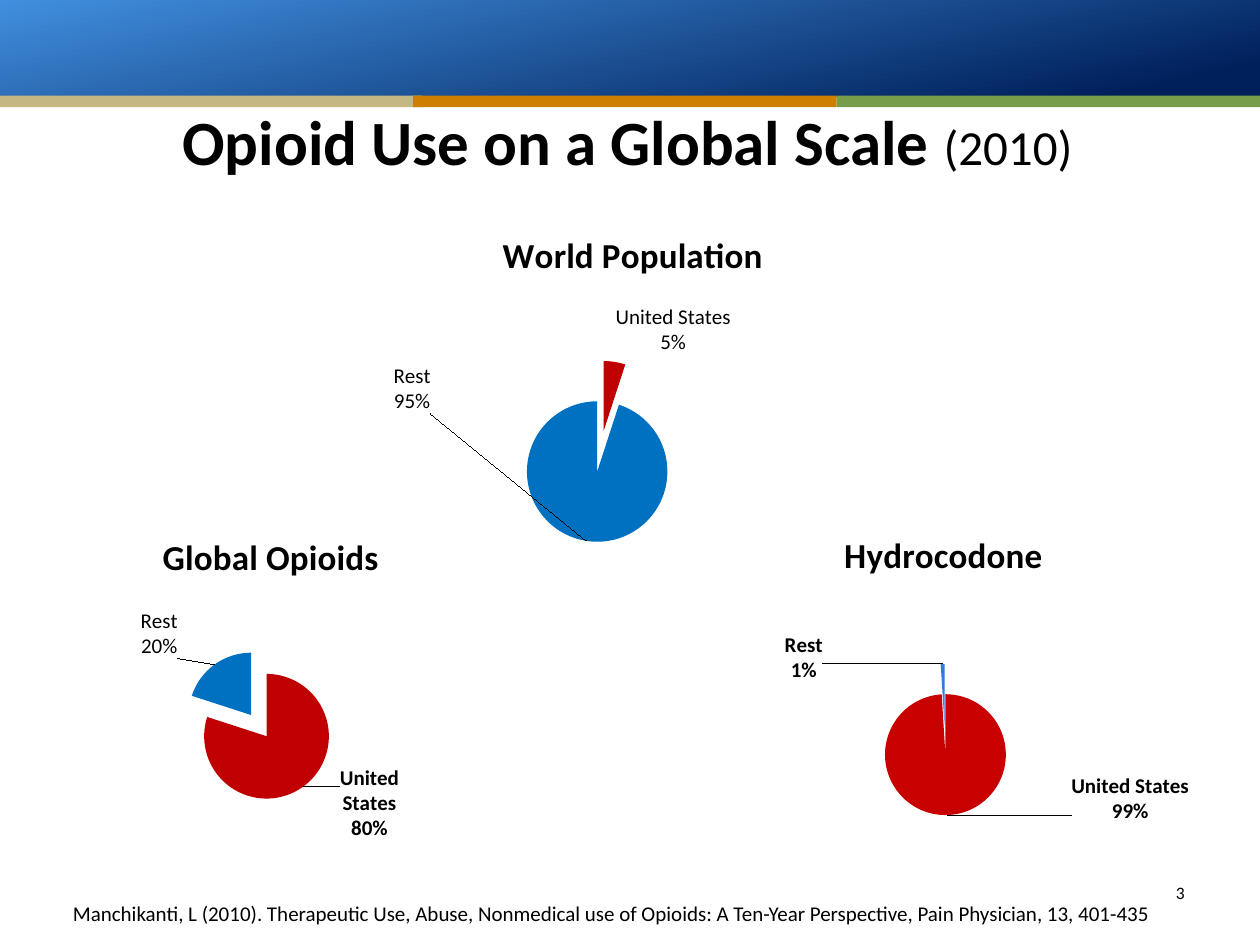
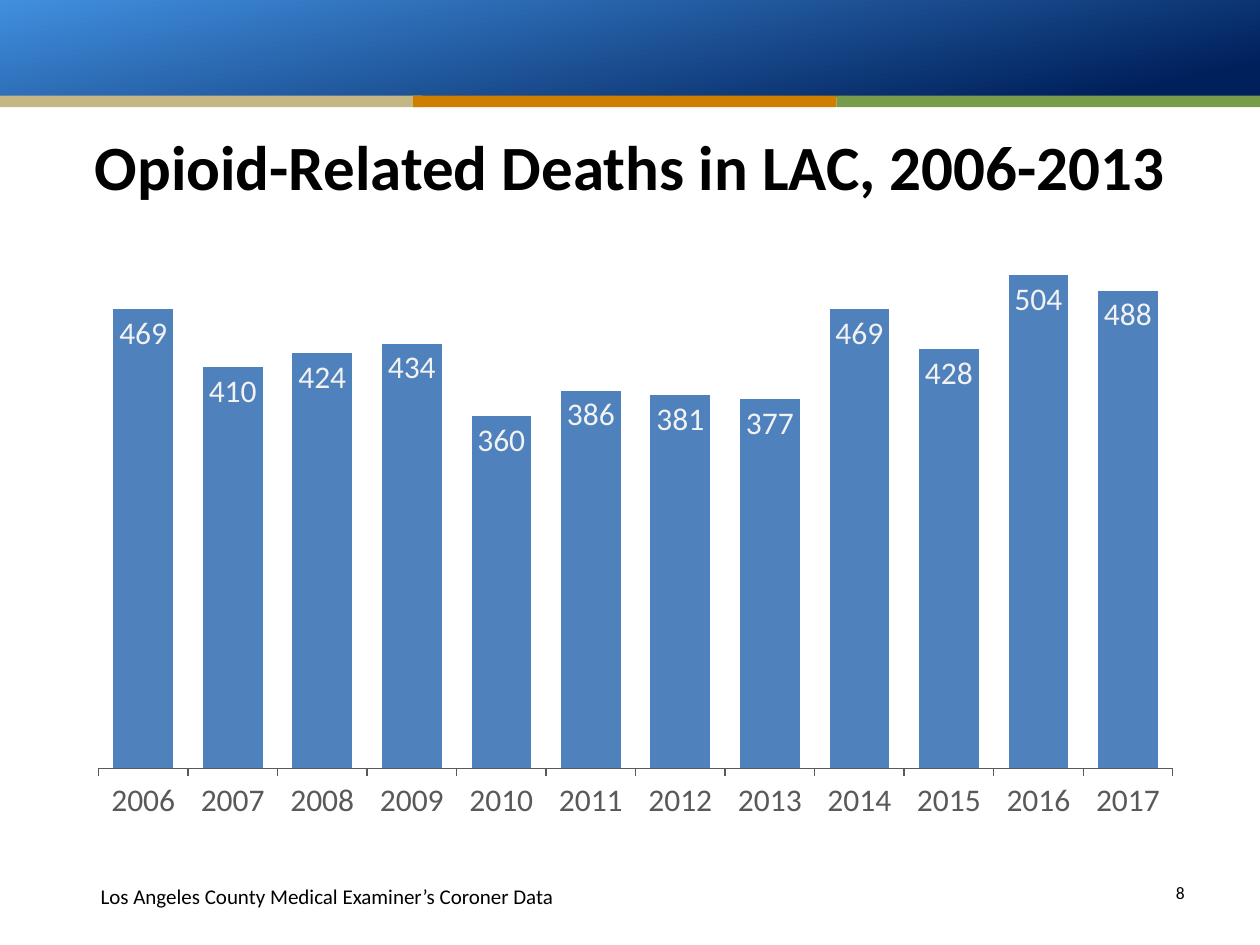
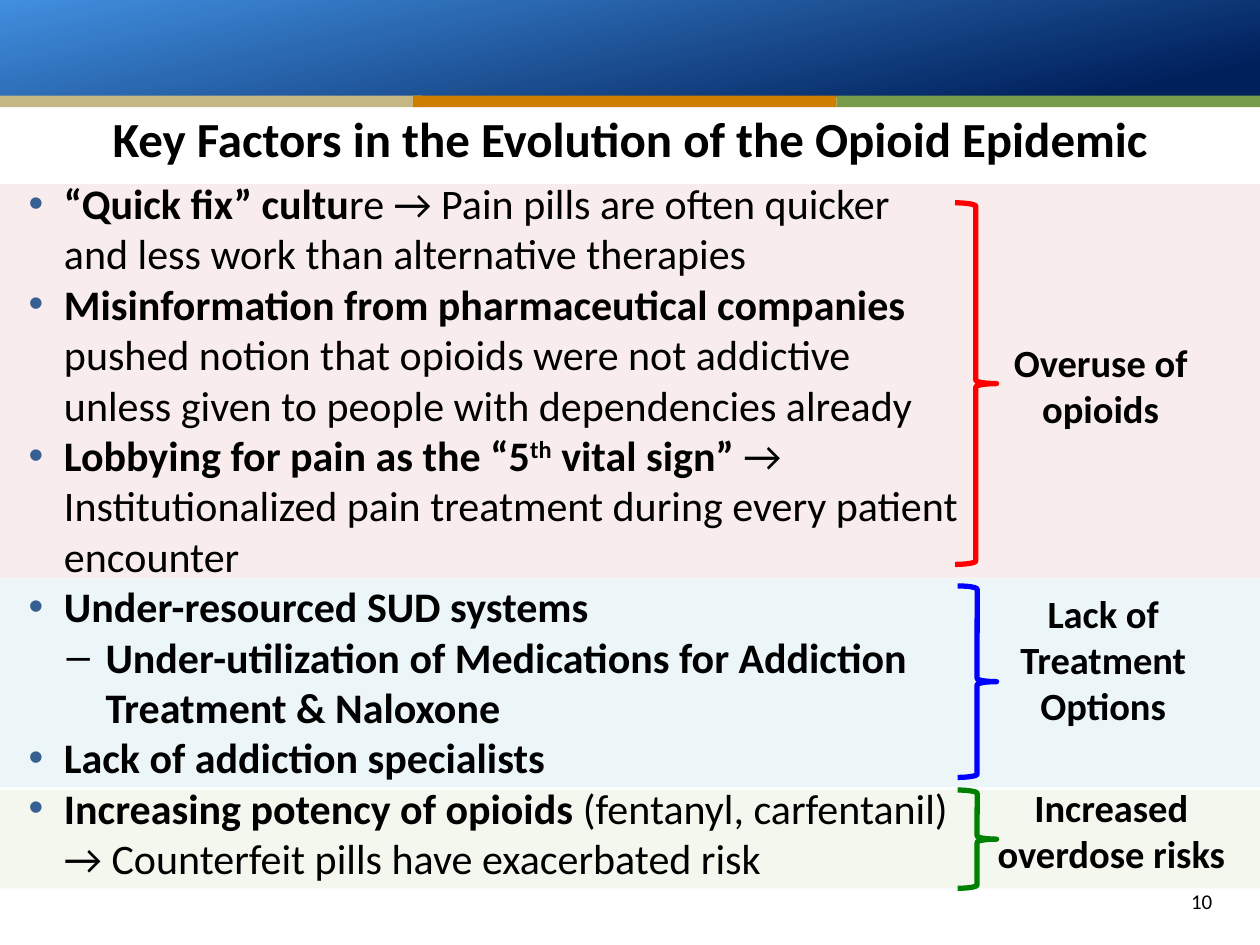
from dataclasses import dataclass

from pptx import Presentation, util as u
from pptx.chart.data import CategoryChartData
from pptx.dml.color import RGBColor
from pptx.enum import chart as ch, shapes, text
from pptx.oxml import parse_xml
from pptx.oxml.ns import nsdecls


@dataclass(frozen=True)
class Theme:
    font: str = "Calibri"
    ink: str = "000000"
    navy: str = "00205B"
    sky: str = "418FDE"
    bands: tuple = ("C5B783", "CF7F00", "789D4A")
    red: str = "C00000"
    blue: str = "0070C0"
    bar: str = "4F81BD"
    pale: str = "F2F2F2"
    grey: str = "595959"
    dot: str = "376092"
    title: int = 36
    sub: int = 28
    body: int = 24
    side: int = 22
    head: int = 20
    axis: int = 18
    note: int = 12
    page: int = 10


T = Theme()
LEFT, MID, RIGHT = text.PP_ALIGN.LEFT, text.PP_ALIGN.CENTER, text.PP_ALIGN.RIGHT


def rgb(tone):
    return RGBColor.from_string(tone)


def inches(box):
    return [u.Inches(n) for n in box]


def xml(tag, inner="", attrs=""):
    return parse_xml(f'<{tag} {nsdecls("a", "c")} {attrs}>{inner}</{tag}>')


def style(font, size, tone=T.ink, bold=None):
    font.name, font.size, font.bold = T.font, u.Pt(size), bold
    font.color.rgb = rgb(tone)


def draw(slide, kind, box):
    shape = slide.shapes.add_shape(kind, *inches(box))
    shape.shadow.inherit = False
    return shape


def block(slide, box, tone, alpha=None):
    shape = draw(slide, shapes.MSO_SHAPE.RECTANGLE, box)
    shape.fill.solid()
    shape.fill.fore_color.rgb = rgb(tone)
    shape.line.fill.background()
    if alpha:
        tint = shape.element.xpath("./p:spPr/a:solidFill/a:srgbClr")[0]
        tint.append(xml("a:alpha", attrs=f'val="{alpha * 1000}"'))
    return shape


def write(slide, box, words, size, align=LEFT, bold=None, middle=False):
    shape = slide.shapes.add_textbox(*inches(box))
    frame = shape.text_frame
    frame.word_wrap = True
    if middle:
        frame.vertical_anchor = text.MSO_ANCHOR.MIDDLE
    para = frame.paragraphs[0]
    para.text, para.alignment = words, align
    style(para.font, size, bold=bold)
    return para


def start(deck, page, spot=(8.92, 6.95, 0.58, 0.4), size=T.page, middle=False):
    slide = deck.slides.add_slide(deck.slide_layouts[6])
    fill = block(slide, (0, 0, 10.01, 0.77), T.navy).fill
    fill.gradient()
    fill.gradient_angle = 102
    for stop, tone, place in zip(fill.gradient_stops, (T.navy, T.sky), (0.09, 1)):
        stop.color.rgb, stop.position = rgb(tone), place
    for left, tone in zip((-0.01, 3.28, 6.64), T.bands):
        block(slide, (left, 0.76, 3.36, 0.09), tone)
    write(slide, spot, str(page), size, RIGHT, middle=middle)
    return slide


def title(slide, box, words, size=T.title):
    return write(slide, box, words, size, MID, True, True)


def set_pos(node, index, spot, inner=False):
    for old in node.xpath("./c:layout"):
        node.remove(old)
    parts = '<c:layoutTarget val="inner"/>' if inner else ""
    names = "xywh"[:len(spot)]
    parts += "".join(f'<c:{n}Mode val="edge"/>' for n in names[:2])
    parts += "".join(f'<c:{n} val="{v}"/>' for n, v in zip(names, spot))
    node.insert(index, xml("c:layout", f"<c:manualLayout>{parts}</c:manualLayout>"))


def add_chart(slide, kind, box, cats, vals):
    data = CategoryChartData()
    data.categories = cats
    data.add_series("Series 1", vals)
    chart = slide.shapes.add_chart(kind, *inches(box), data).chart
    chart.has_legend = False
    return chart


def show_tags(percent):
    flags = dict(LegendKey=0, Val=0, CatName=percent, SerName=0, Percent=percent, BubbleSize=0)
    return ('<c:dLblPos val="outEnd"/>'
            + "".join(f'<c:show{k} val="{v}"/>' for k, v in flags.items())
            + "<c:separator>\n</c:separator>")


def tag(index, shift, bold, lines):
    look = (f'sz="{T.note * 100}" b="{int(bold)}"><a:solidFill><a:srgbClr val="{T.ink}"/>'
            f'</a:solidFill><a:latin typeface="{T.font}"/>')
    pos = "".join(f'<c:{n} val="{v}"/>' for n, v in zip("xy", shift))
    form = '<c:numFmt formatCode="0%" sourceLinked="0"/>'
    props = f"<a:pPr><a:defRPr {look}</a:defRPr></a:pPr>"
    if lines:
        paras = "".join(f"<a:p>{props}<a:r><a:rPr {look}</a:rPr><a:t>{line}</a:t></a:r></a:p>"
                        for line in lines)
        words = f"<c:tx><c:rich><a:bodyPr/>{paras}</c:rich></c:tx>{form}"
    else:
        words = f"{form}<c:txPr><a:bodyPr/><a:p>{props}</a:p></c:txPr>"
    return (f'<c:dLbl><c:idx val="{index}"/><c:layout><c:manualLayout>{pos}</c:manualLayout>'
            f"</c:layout>{words}{show_tags(1)}</c:dLbl>")


def pie(slide, box, head, spot, cats, vals, tones, burst, plot, tags):
    chart = add_chart(slide, ch.XL_CHART_TYPE.PIE, box, cats, vals)
    style(chart.font, T.page)
    chart.has_title = True
    para = chart.chart_title.text_frame.paragraphs[0]
    para.text = head
    style(para.font, T.head, bold=True)
    for index, tone in enumerate(tones):
        fill = chart.plots[0].series[0].points[index].format.fill
        fill.solid()
        fill.fore_color.rgb = rgb(tone)
    root = chart.element
    for node in root.xpath("//c:ser/c:dPt[1] | //c:dPt/c:spPr"):
        node.addprevious(xml("c:explosion", attrs=f'val="{burst}"'))
    for old in root.xpath("//c:dLbls"):
        old.getparent().remove(old)
    inner = "".join(tag(i, *item) for i, item in enumerate(tags))
    inner += ('<c:numFmt formatCode="0%" sourceLinked="0"/>' + show_tags(1)
              + '<c:showLeaderLines val="1"/>')
    root.xpath("//c:ser/c:cat")[0].addprevious(xml("c:dLbls", inner))
    set_pos(root.xpath("//c:plotArea")[0], 0, plot, True)
    set_pos(root.xpath("//c:chart/c:title")[0], 1, spot)


def bars(slide, box, cats, vals, plot):
    chart = add_chart(slide, ch.XL_CHART_TYPE.COLUMN_CLUSTERED, box, cats, vals)
    style(chart.font, T.axis)
    chart.has_title = False
    group = chart.plots[0]
    group.gap_width, group.vary_by_categories = 50, False
    fill = group.series[0].format.fill
    fill.solid()
    fill.fore_color.rgb = rgb(T.bar)
    group.has_data_labels = True
    marks = group.data_labels
    marks.show_value, marks.position = True, ch.XL_LABEL_POSITION.INSIDE_END
    style(marks.font, T.axis, T.pale)
    years, count = chart.category_axis, chart.value_axis
    years.major_tick_mark = ch.XL_TICK_MARK.OUTSIDE
    years.has_major_gridlines = False
    style(years.tick_labels.font, T.axis, T.grey)
    years.format.line.color.rgb, years.format.line.width = rgb(T.grey), u.Pt(0.75)
    count.minimum_scale, count.maximum_scale = 0, 600
    count.has_major_gridlines = count.visible = False
    set_pos(chart.element.xpath("//c:plotArea")[0], 0, plot, True)


def bullets(slide, box, items):
    shape = slide.shapes.add_textbox(*inches(box))
    frame = shape.text_frame
    frame.word_wrap = True
    for index, (level, parts) in enumerate(items):
        para = frame.paragraphs[0] if index == 0 else frame.add_paragraph()
        para.level = level
        props = shape.element.xpath(".//a:p")[-1].get_or_add_pPr()
        left, hang, sign, tone = ((0.28, 0.28, "•", T.dot), (0.61, 0.31, "–", T.ink))[level]
        props.set("marL", str(u.Inches(left)))
        props.set("indent", str(-u.Inches(hang)))
        props.append(xml("a:buClr", f'<a:srgbClr val="{tone}"/>'))
        props.append(xml("a:buFont", attrs='typeface="Arial"'))
        props.append(xml("a:buChar", attrs=f'char="{sign}"'))
        style(para.font, T.body)
        for words, bold in parts:
            run = para.add_run()
            run.text, run.font.bold = words, bold
    for mark in shape.element.xpath('.//a:r[a:t="th"]/a:rPr'):
        mark.set("baseline", "30000")


def brace(slide, box, tone):
    shape = draw(slide, shapes.MSO_SHAPE.RIGHT_BRACE, box)
    shape.fill.background()
    shape.line.color.rgb, shape.line.width = rgb(tone), u.Pt(3)


def use_slide(deck):
    slide = start(deck, 3)
    pair = ("United States", "The Rest")
    pie(slide, (0, 4.05, 4.28, 3), "Global Opioids", (0.29, 0.04), pair, (80, 20),
        (T.red, T.blue), 21, (0.34, 0.37, 0.28, 0.4),
        [((0.06, -0.07), True, ()), ((-0.06, 0), False, ("Rest", "20%"))])
    pie(slide, (2.34, 1.65, 5.33, 3.25), "World Population", (0.3, 0.04), pair, (5, 95),
        (T.red, T.blue), 29, (0.32, 0.37, 0.27, 0.45),
        [((0, 0), False, ("United States", "5%")),
         ((-0.23, -0.45), False, ("Rest", "95%"))])
    write(slide, (0.48, 7.1, 9.15, 0.3),
          "Manchikanti, L (2010). Therapeutic Use, Abuse, Nonmedical use of Opioids: "
          "A Ten-Year Perspective, Pain Physician, 13, 401-435", T.note)
    pie(slide, (5, 4.04, 5, 3), "Hydrocodone", (0.33, 0.04), ("United States", "Rest"),
        (99, 1), ("C80000", "3478E2"), 25, (0.38, 0.41, 0.24, 0.4),
        [((0.29, -0.13), True, ()), ((-0.22, 0.07), True, ())])
    para = title(slide, (0.48, 0.77, 9, 0.69), "Opioid Use on a Global Scale ")
    year = para.add_run()
    year.text, year.font.size, year.font.bold = "(2010)", u.Pt(T.sub), False


def death_slide(deck):
    slide = start(deck, 8)
    title(slide, (0, 0.97, 10, 0.69), "Opioid-Related Deaths in LAC, 2006-2013")
    write(slide, (0.7, 6.96, 7.97, 0.3),
          "Los Angeles County Medical Examiner’s Coroner Data", T.note)
    bars(slide, (0.51, 1.33, 9.07, 5.36), range(2006, 2018),
         (469, 410, 424, 434, 360, 386, 381, 377, 469, 428, 504, 488),
         (0.03, 0.02, 0.94, 0.87))


def cause_slide(deck):
    slide = start(deck, 10, (9.14, 6.95, 0.58, 0.4), T.note, True)
    for top, high, tone in ((4.59, 1.66, "DBEEF4"), (6.27, 0.78, "EBF1DE"),
                            (1.46, 3.13, "F2DCDB")):
        block(slide, (0, top, 10, high), tone, 50)
    title(slide, (0, 0.75, 10, 0.69),
          "Key Factors in the Evolution of the Opioid Epidemic", T.sub)
    bullets(slide, (0.13, 1.36, 7.6, 5.7), [
        (0, [("“Quick fix” cultu", True),
             ("re → Pain pills are often quicker and less work than alternative therapies",
              False)]),
        (0, [("Misinformation from pharmaceutical companies ", True),
             ("pushed notion that opioids were not addictive unless given to people "
              "with dependencies already", False)]),
        (0, [("Lobbying for pain as the “5", True), ("th", True), (" vital sign” ", True),
             ("→ Institutionalized pain treatment during every patient encounter", False)]),
        (0, [("Under-resourced SUD systems", True)]),
        (1, [("Under-utilization of Medications for Addiction Treatment & Naloxone", True)]),
        (0, [("Lack of addiction specialists", True)]),
        (0, [("Increasing potency of opioids", True),
             (" (fentanyl, carfentanil) → Counterfeit pills have exacerbated risk", False)]),
    ])
    for spot, tone, box, words in (
            ((7.58, 1.61, 0.33, 2.87), "FF0000", (7.78, 2.64, 1.91, 0.84),
             "Overuse of opioids"),
            ((7.6, 4.65, 0.31, 1.52), "0000FF", (7.8, 4.63, 1.91, 1.21),
             "Lack of Treatment Options"),
            ((7.6, 6.27, 0.31, 0.78), "008000", (7.8, 6.17, 2.04, 0.84),
             "Increased overdose risks")):
        brace(slide, spot, tone)
        write(slide, box, words, T.side, MID, True)


def main():
    deck = Presentation()
    deck.slide_width, deck.slide_height = inches((10, 7.5))
    use_slide(deck)
    death_slide(deck)
    cause_slide(deck)
    deck.save("out.pptx")


if __name__ == "__main__":
    main()
